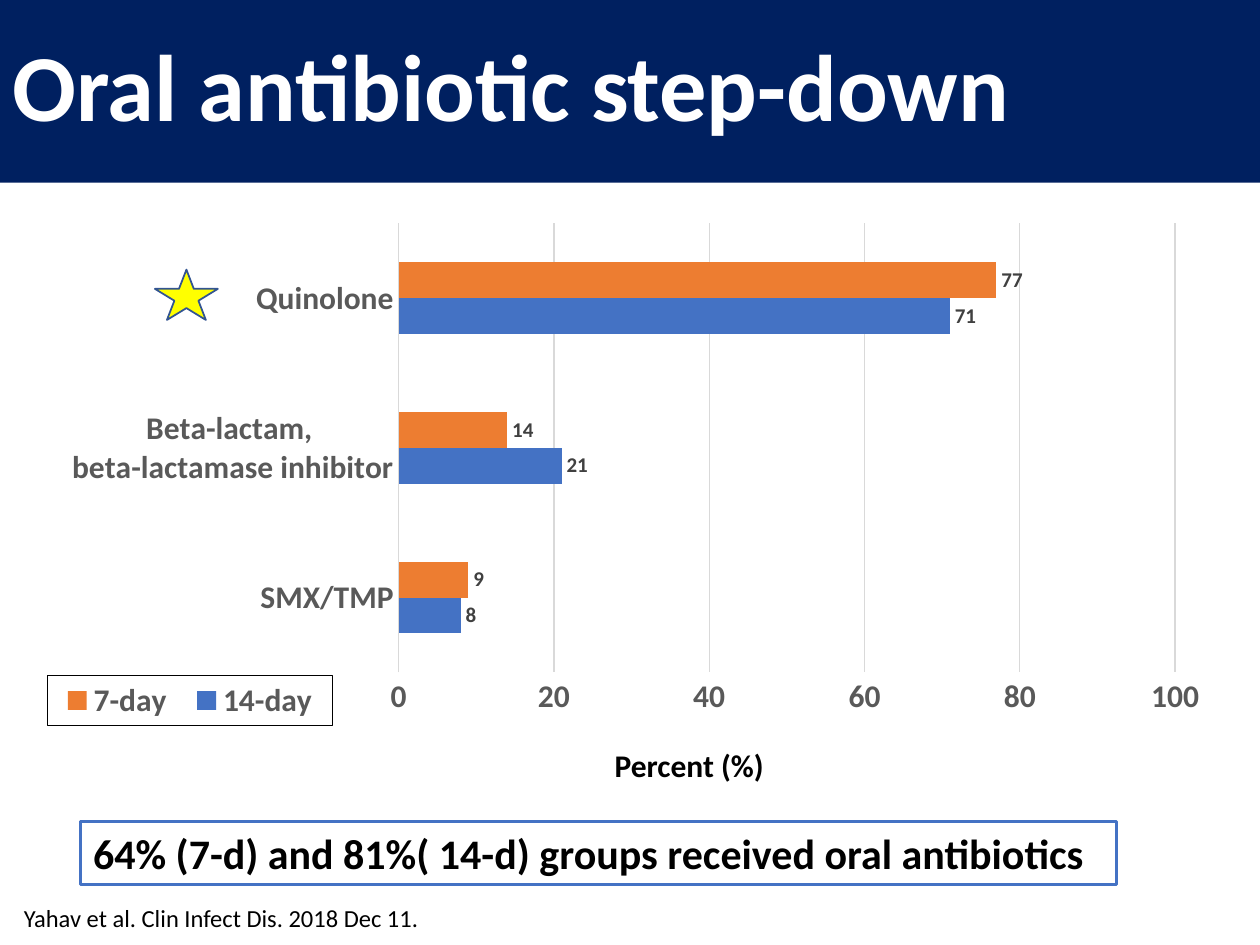
from lxml import etree
from pptx import Presentation
from pptx.chart.data import CategoryChartData
from pptx.dml.color import RGBColor
from pptx.enum.chart import (XL_CHART_TYPE, XL_LABEL_POSITION,
                             XL_LEGEND_POSITION, XL_TICK_MARK)
from pptx.enum.shapes import MSO_SHAPE
from pptx.enum.text import MSO_ANCHOR, PP_ALIGN
from pptx.oxml import parse_xml
from pptx.oxml.ns import nsdecls, qn
from pptx.util import Inches, Pt

BAR_CLUSTERED = XL_CHART_TYPE.BAR_CLUSTERED
OUTSIDE_END = XL_LABEL_POSITION.OUTSIDE_END
LEGEND_BOTTOM = XL_LEGEND_POSITION.BOTTOM
NO_TICKS = XL_TICK_MARK.NONE
RECTANGLE = MSO_SHAPE.RECTANGLE
STAR = MSO_SHAPE.STAR_5_POINT
MIDDLE = MSO_ANCHOR.MIDDLE
LEFT = PP_ALIGN.LEFT

FONT = "Calibri"
NAVY = RGBColor(0x00, 0x20, 0x60)
WHITE = RGBColor(0xFF, 0xFF, 0xFF)
BLACK = RGBColor(0x00, 0x00, 0x00)
BLUE = RGBColor(0x44, 0x72, 0xC4)
ORANGE = RGBColor(0xED, 0x7D, 0x31)
YELLOW = RGBColor(0xFF, 0xFF, 0x00)
STAR_EDGE = RGBColor(0x32, 0x54, 0x91)
GRID_GREY = RGBColor(0xD9, 0xD9, 0xD9)
AXIS_GREY = RGBColor(0x59, 0x59, 0x59)
LABEL_GREY = RGBColor(0x40, 0x40, 0x40)

CATEGORIES = ["SMX/TMP", "Beta-lactam, \nbeta-lactamase inhibitor", "Quinolone"]
SERIES = [("14-day", (8, 21, 71), BLUE), ("7-day", (9, 14, 77), ORANGE)]


def style_font(font, size, color, bold=True):
    font.name = FONT
    font.size = Pt(size)
    font.bold = bold
    font.color.rgb = color


def style_line(line, color, width):
    line.color.rgb = color
    line.width = Pt(width)


def add_box(slide, shape_type, box, fill=None, edge=None, edge_width=1):
    shape = slide.shapes.add_shape(shape_type, *map(Inches, box))
    shape.shadow.inherit = False
    if fill is None:
        shape.fill.background()
    else:
        shape.fill.solid()
        shape.fill.fore_color.rgb = fill
    if edge is None:
        shape.line.fill.background()
    else:
        style_line(shape.line, edge, edge_width)
    return shape


def write(shape, text, size, color=BLACK, bold=True):
    frame = shape.text_frame
    frame.word_wrap = True
    frame.text = text
    paragraph = frame.paragraphs[0]
    paragraph.alignment = LEFT
    style_font(paragraph.runs[0].font, size, color, bold)
    return paragraph


def add_label(slide, box, text, size, bold):
    write(slide.shapes.add_textbox(*map(Inches, box)), text, size, bold=bold)


def manual_layout(x, y, width, height, inner=False):
    """Chart-part layout in fractions of the chart frame."""
    layout = parse_xml(f"<c:layout {nsdecls('c')}><c:manualLayout/></c:layout>")
    settings = [("layoutTarget", "inner")] if inner else []
    settings += [("xMode", "edge"), ("yMode", "edge"),
                 ("x", x), ("y", y), ("w", width), ("h", height)]
    for tag, value in settings:
        etree.SubElement(layout[0], qn(f"c:{tag}")).set("val", str(value))
    return layout


def style_axes(chart):
    for axis in (chart.category_axis, chart.value_axis):
        axis.major_tick_mark = axis.minor_tick_mark = NO_TICKS
        style_font(axis.tick_labels.font, 18, AXIS_GREY)
    style_line(chart.category_axis.format.line, GRID_GREY, 0.75)
    percent = chart.value_axis
    percent.minimum_scale, percent.maximum_scale = 0, 100
    percent.major_unit = 20
    percent.format.line.fill.background()
    style_line(percent.major_gridlines.format.line, GRID_GREY, 0.75)


def style_legend(chart):
    chart.has_legend = True
    legend = chart.legend
    legend.position = LEGEND_BOTTOM
    legend.include_in_layout = False
    style_font(legend.font, 18, AXIS_GREY)
    element = legend._element
    for old in element.findall(qn("c:layout")):
        element.remove(old)
    element.find(qn("c:legendPos")).addnext(
        manual_layout(0.02, 0.87, 0.24, 0.09))
    border = parse_xml(
        f"<c:spPr {nsdecls('c', 'a')}><a:noFill/><a:ln w='9525'><a:solidFill>"
        f"<a:srgbClr val='{BLACK}'/></a:solidFill></a:ln></c:spPr>")
    element.find(qn("c:txPr")).addprevious(border)


def add_step_down_chart(slide):
    data = CategoryChartData()
    data.categories = CATEGORIES
    for name, values, _ in SERIES:
        data.add_series(name, values)
    chart = slide.shapes.add_chart(
        BAR_CLUSTERED, Inches(0.19), Inches(1.58), Inches(9.41), Inches(4.35),
        data).chart
    chart.has_title = False
    style_font(chart.font, 10, BLACK, bold=False)
    plot = chart.plots[0]
    plot.gap_width = 219
    plot.vary_by_categories = False
    for series, (_, _, color) in zip(plot.series, SERIES):
        series.format.fill.solid()
        series.format.fill.fore_color.rgb = color
        labels = series.data_labels
        labels.show_value = True
        labels.position = OUTSIDE_END
        style_font(labels.font, 12, LABEL_GREY)
    style_axes(chart)
    style_legend(chart)
    plot_area = chart._chartSpace.chart.plotArea
    for old in plot_area.findall(qn("c:layout")):
        plot_area.remove(old)
    plot_area.insert(0, manual_layout(0.316, 0.044, 0.655, 0.82, inner=True))


def main():
    prs = Presentation()
    prs.slide_width, prs.slide_height = Inches(10), Inches(7.5)
    slide = prs.slides.add_slide(prs.slide_layouts[6])

    banner = add_box(slide, RECTANGLE, (0, 0, 10, 1.45), fill=NAVY)
    banner.text_frame.vertical_anchor = MIDDLE
    write(banner, "Oral antibiotic step-down", 54, WHITE).line_spacing = 0.9

    add_step_down_chart(slide)

    finding = add_box(slide, RECTANGLE, (0.64, 6.52, 8.22, 0.5),
                      edge=BLUE, edge_width=2)
    write(finding, "64% (7-d) and 81%( 14-d) groups received oral antibiotics", 24)

    add_label(slide, (0.09, 7.12, 3.48, 0.34),
              "Yahav et al. Clin Infect Dis. 2018 Dec 11.", 14, bold=False)
    add_label(slide, (4.78, 5.87, 1.5, 0.4), "Percent (%)", 18, bold=True)
    add_box(slide, STAR, (1.23, 2.14, 0.5, 0.4), fill=YELLOW, edge=STAR_EDGE)

    prs.save("out.pptx")


if __name__ == "__main__":
    main()
